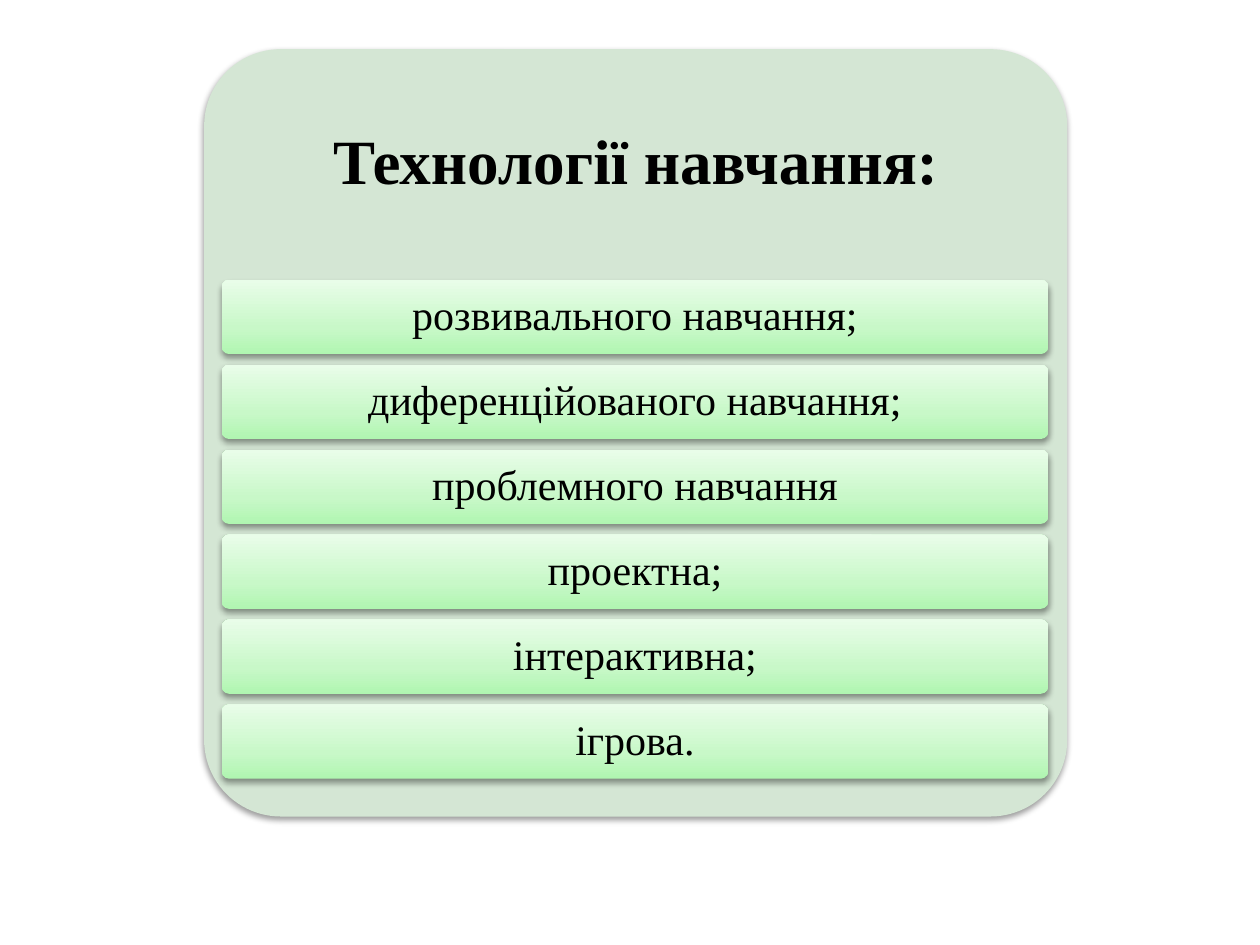
"""Build a slide listing teaching technologies as bars on a rounded panel."""
from copy import deepcopy
from dataclasses import dataclass

from lxml.etree import SubElement
from pptx import Presentation
from pptx.dml.color import RGBColor
from pptx.enum.shapes import MSO_SHAPE
from pptx.enum.text import MSO_ANCHOR, MSO_AUTO_SIZE, PP_ALIGN
from pptx.oxml.ns import qn
from pptx.shapes.autoshape import Shape
from pptx.slide import Slide
from pptx.util import Inches, Pt

TECHNOLOGIES = [
    "розвивального навчання;",
    "диференційованого навчання;",
    "проблемного навчання",
    "проектна;",
    "інтерактивна;",
    "ігрова.",
]
BAR_STOPS = [(0, "B0F6B1"), (0.35, "C8F8C8"), (1, "E9FDE9")]
FIRST_BAR_TOP, LAST_BAR_TOP = 2.22, 5.59
BAR_STEP = (LAST_BAR_TOP - FIRST_BAR_TOP) / (len(TECHNOLOGIES) - 1)


@dataclass(frozen=True)
class Box:
    """Position and size in inches."""

    left: float
    top: float
    width: float
    height: float

    def lengths(self) -> tuple:
        """Return the four values as slide lengths."""
        return tuple(map(Inches, (self.left, self.top, self.width, self.height)))


def rgb(value: str) -> RGBColor:
    """Turn a hex string into a colour."""
    return RGBColor.from_string(value)


def add_shadow(shape: Shape) -> None:
    """Give the shape a soft shadow straight below it."""
    shape.shadow.inherit = False
    effects = shape.element.spPr.find(qn("a:effectLst"))
    outer = SubElement(effects, qn("a:outerShdw"), blurRad=str(Pt(3.5)),
                       dist=str(Pt(2)), dir="5400000", rotWithShape="0")
    black = SubElement(outer, qn("a:srgbClr"), val="000000")
    SubElement(black, qn("a:alpha"), val="38000")


def add_rounded(slide: Slide, box: Box) -> Shape:
    """Add a rounded rectangle with a shadow and no outline."""
    rounded = slide.shapes.add_shape(MSO_SHAPE.ROUNDED_RECTANGLE, *box.lengths())
    rounded.adjustments[0] = 0.1
    rounded.line.fill.background()
    add_shadow(rounded)
    return rounded


def fill_gradient(shape: Shape) -> None:
    """Fill the shape from green at the bottom to pale green at the top."""
    shape.fill.gradient()
    shape.fill.gradient_angle = 90
    first_stop = shape.element.spPr.find(".//" + qn("a:gs"))
    first_stop.addnext(deepcopy(first_stop))
    for stop, (position, color) in zip(shape.fill.gradient_stops, BAR_STOPS):
        stop.position = position
        stop.color.rgb = rgb(color)


def write(shape: Shape, text: str, size: int, bold: bool,
          inset_x: float, inset_y: float) -> None:
    """Write one centred black paragraph in the shape."""
    frame = shape.text_frame
    frame.text = text
    paragraph = frame.paragraphs[0]
    formats = {
        frame: {
            "word_wrap": True,
            "auto_size": MSO_AUTO_SIZE.NONE,
            "vertical_anchor": MSO_ANCHOR.MIDDLE,
            "margin_left": Inches(inset_x),
            "margin_right": Inches(inset_x),
            "margin_top": Inches(inset_y),
            "margin_bottom": Inches(inset_y),
        },
        paragraph: {"alignment": PP_ALIGN.CENTER, "line_spacing": 0.9},
        paragraph.runs[0].font: {"name": "Times New Roman", "size": Pt(size), "bold": bold},
    }
    for target, values in formats.items():
        for name, value in values.items():
            setattr(target, name, value)
    paragraph.runs[0].font.color.rgb = rgb("000000")


def add_heading(slide: Slide) -> None:
    """Add the panel and place the title on its upper part."""
    panel = add_rounded(slide, Box(1.62, 0.39, 6.85, 6.09))
    panel.fill.solid()
    panel.fill.fore_color.rgb = rgb("D4E6D4")
    title = slide.shapes.title
    panel.element.addnext(title.element)
    title.left, title.top, title.width, title.height = Box(1.62, 0.39, 6.85, 1.83).lengths()
    write(title, "Технології навчання:", 36, True, 0.15, 0.15)


def add_bar(slide: Slide, index: int, technology: str) -> None:
    """Add the bar for one technology."""
    bar = add_rounded(slide, Box(1.76, FIRST_BAR_TOP + index * BAR_STEP, 6.56, 0.59))
    fill_gradient(bar)
    write(bar, technology, 24, False, 0.07, 0.05)


def main() -> None:
    """Build and save the presentation."""
    presentation = Presentation()
    presentation.slide_width, presentation.slide_height = Inches(10), Inches(7.5)
    slide = presentation.slides.add_slide(presentation.slide_layouts.get_by_name("Title Only"))
    add_heading(slide)
    for index, technology in enumerate(TECHNOLOGIES):
        add_bar(slide, index, technology)
    presentation.save("out.pptx")


if __name__ == "__main__":
    main()
